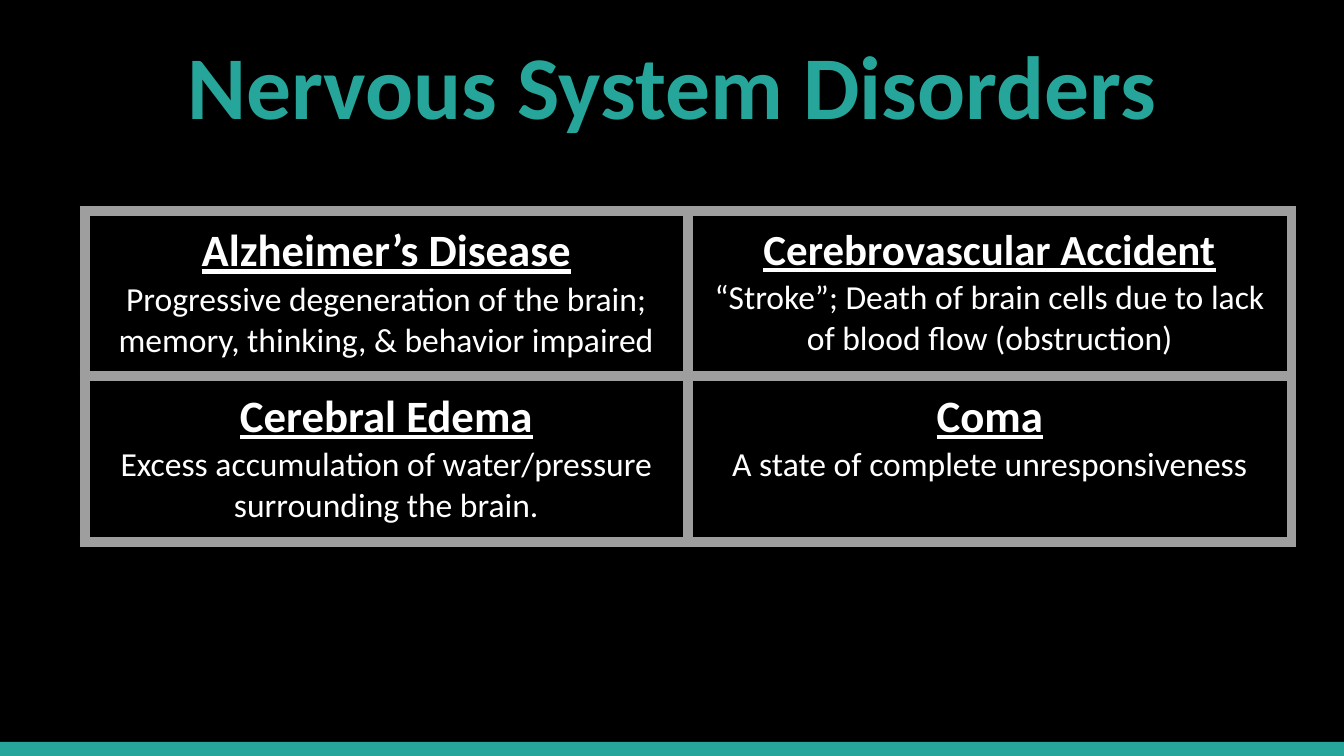
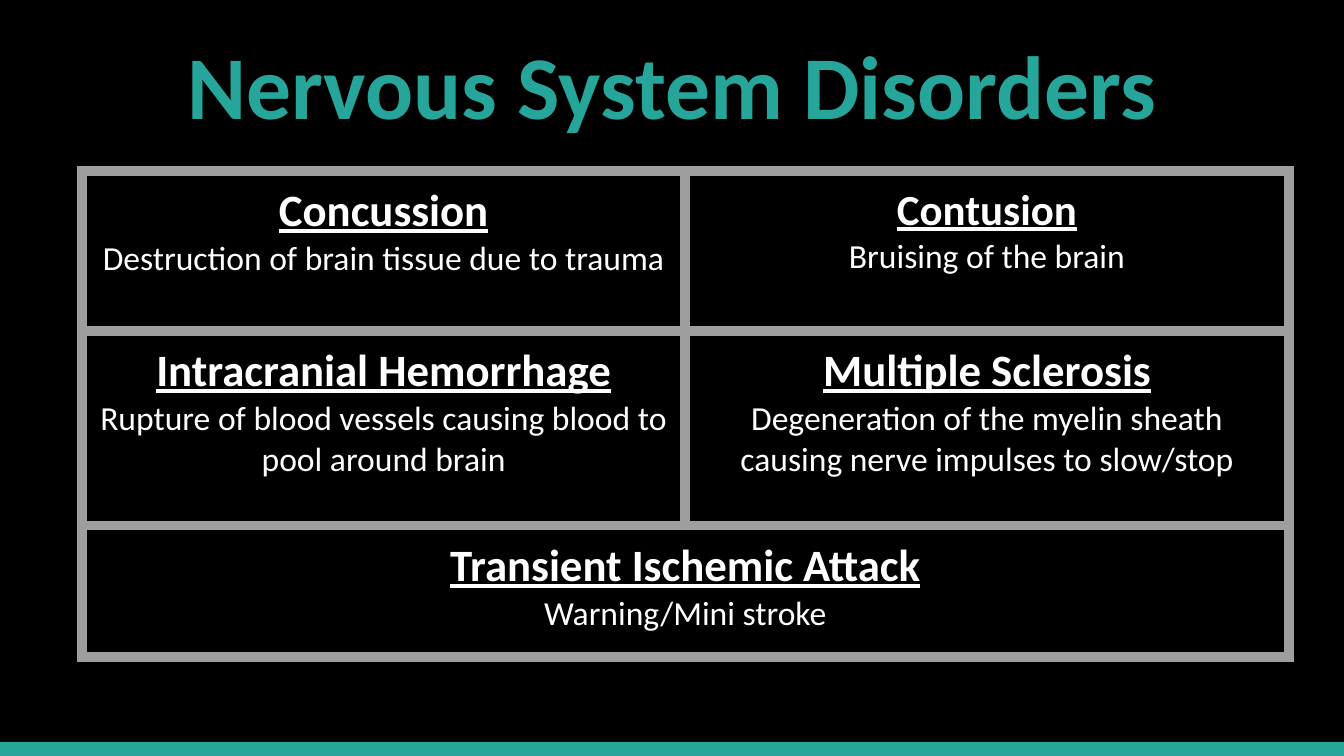
"""Build two slides of nervous system disorder tables."""
from dataclasses import dataclass

from lxml import etree
from pptx import Presentation
from pptx.dml.color import RGBColor
from pptx.enum.shapes import MSO_SHAPE
from pptx.enum.text import MSO_ANCHOR, PP_ALIGN
from pptx.oxml.ns import qn
from pptx.util import Inches, Pt

RECT = MSO_SHAPE.RECTANGLE
CENTER = PP_ALIGN.CENTER
TOP = MSO_ANCHOR.TOP


@dataclass(frozen=True)
class Theme:
    font: str = "Calibri"
    back: str = "000000"
    accent: str = "26A69A"
    text: str = "FFFFFF"
    border: str = "9E9E9E"
    border_pt: float = 6
    title_pt: float = 48
    name_pt: float = 24
    small_name_pt: float = 23
    body_pt: float = 18


THEME = Theme()
WIDTH = 10
HEIGHT = WIDTH * 9 / 16
BAND_TOP, BAND_HEIGHT = 5.52, 0.11
INSET = 0.1
COL_WIDTH = 4.49
COLS = 2
TITLE = "Nervous System Disorders"

SLIDES = [
    {
        "at": (0.63, 1.57),
        "heights": [1.23, 1.23],
        "rows": [
            [
                ("Alzheimer’s Disease", THEME.name_pt,
                 "Progressive degeneration of the brain; memory, thinking, & behavior impaired"),
                ("Cerebrovascular Accident", THEME.small_name_pt,
                 "“Stroke”; Death of brain cells due to lack of blood flow (obstruction)"),
            ],
            [
                ("Cerebral Edema", THEME.name_pt,
                 "Excess accumulation of water/pressure surrounding the brain."),
                ("Coma", THEME.name_pt, "A state of complete unresponsiveness"),
            ],
        ],
    },
    {
        "at": (0.61, 1.27),
        "heights": [1.19, 1.45, 0.98],
        "rows": [
            [
                ("Concussion", THEME.name_pt, "Destruction of brain tissue due to trauma"),
                ("Contusion", THEME.small_name_pt, "Bruising of the brain"),
            ],
            [
                ("Intracranial Hemorrhage", THEME.name_pt,
                 "Rupture of blood vessels causing blood to pool around brain"),
                ("Multiple Sclerosis", THEME.name_pt,
                 "Degeneration of the myelin sheath causing nerve impulses to slow/stop"),
            ],
            [("Transient Ischemic Attack", THEME.name_pt, "Warning/Mini stroke")],
        ],
    },
]


def rgb(color):
    return RGBColor.from_string(color)


def set_insets(box):
    box.margin_left = box.margin_right = Inches(INSET)
    box.margin_top = box.margin_bottom = Inches(INSET)


def add_run(p, text, size, color, bold=False, underline=False):
    p.alignment = CENTER
    r = p.add_run()
    r.text = text
    r.font.name = THEME.font
    r.font.size = Pt(size)
    r.font.bold = bold
    r.font.underline = underline
    r.font.color.rgb = rgb(color)


def add_base(prs):
    s = prs.slides.add_slide(prs.slide_layouts[6])
    s.background.fill.solid()
    s.background.fill.fore_color.rgb = rgb(THEME.back)

    band = s.shapes.add_shape(RECT, 0, Inches(BAND_TOP), Inches(WIDTH), Inches(BAND_HEIGHT))
    band.shadow.inherit = False
    band.fill.solid()
    band.fill.fore_color.rgb = rgb(THEME.accent)
    band.line.fill.background()

    title = s.shapes.add_textbox(Inches(0.34), Inches(0.12), Inches(9.32), Inches(1.04))
    tf = title.text_frame
    tf.word_wrap = True
    tf.vertical_anchor = TOP
    set_insets(tf)
    add_run(tf.paragraphs[0], TITLE, THEME.title_pt, THEME.accent, bold=True)
    return s


def style_cell(cell):
    tc_pr = cell._tc.get_or_add_tcPr()
    for side in ("a:lnL", "a:lnR", "a:lnT", "a:lnB"):
        ln = etree.SubElement(tc_pr, qn(side), w=str(Pt(THEME.border_pt)))
        fill = etree.SubElement(ln, qn("a:solidFill"))
        etree.SubElement(fill, qn("a:srgbClr"), val=THEME.border)
    cell.fill.solid()
    cell.fill.fore_color.rgb = rgb(THEME.back)
    cell.vertical_anchor = TOP
    set_insets(cell)


def fill_cell(cell, name, name_pt, meaning):
    tf = cell.text_frame
    add_run(tf.paragraphs[0], name, name_pt, THEME.text, bold=True, underline=True)
    add_run(tf.add_paragraph(), meaning, THEME.body_pt, THEME.text)


def add_disorders(s, at, heights, rows):
    left, top = at
    frame = s.shapes.add_table(len(rows), COLS, Inches(left), Inches(top),
                               Inches(COLS * COL_WIDTH), Inches(sum(heights)))
    table = frame.table
    table.first_row = table.horz_banding = False
    for col in table.columns:
        col.width = Inches(COL_WIDTH)
    for i, (height, row) in enumerate(zip(heights, rows)):
        table.rows[i].height = Inches(height)
        for j in range(COLS):
            style_cell(table.cell(i, j))
        if len(row) < COLS:
            table.cell(i, 0).merge(table.cell(i, COLS - 1))
        for j, disorder in enumerate(row):
            fill_cell(table.cell(i, j), *disorder)


def main():
    prs = Presentation()
    prs.slide_width, prs.slide_height = Inches(WIDTH), Inches(HEIGHT)
    for content in SLIDES:
        add_disorders(add_base(prs), **content)
    prs.save("out.pptx")


if __name__ == "__main__":
    main()
